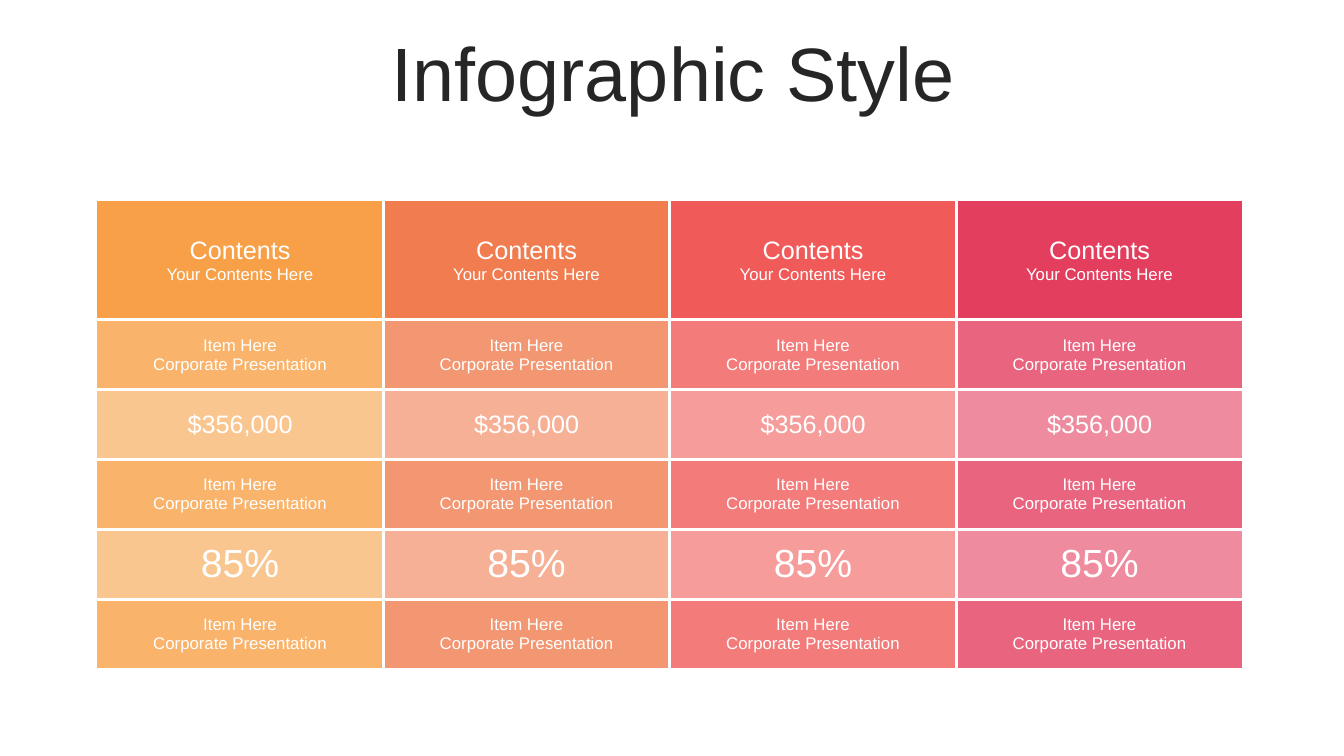
"""Build a slide with a title and a four-column infographic table."""
from lxml.etree import SubElement
from pptx import Presentation
from pptx.dml.color import RGBColor as RGB
from pptx.enum.text import MSO_ANCHOR as ANCHOR, PP_ALIGN as ALIGN
from pptx.oxml.ns import qn
from pptx.util import Cm, Pt

COLORS = {"white": "FFFFFF", "title": "262626", "orange": "F8A047",
          "coral": "F07C4F", "red": "F05A59", "crimson": "E43E5F"}
COLUMNS = ["orange", "coral", "red", "crimson"]
ITEM = {"lines": [("Item Here", 12), ("Corporate Presentation", 12)],
        "alpha": 80, "height": 1.76}
ROWS = [
    {"lines": [("Contents", 18), ("Your Contents Here", 12)],
     "alpha": 100, "height": 3},
    ITEM,
    {"lines": [("$356,000", 18)], "alpha": 60, "height": 1.76},
    ITEM,
    {"lines": [("85%", 28)], "alpha": 60, "height": 1.76},
    ITEM,
]
CELL_FORMAT = {"margin_left": Cm(0.3), "margin_right": Cm(0.3),
               "margin_top": Cm(0.13), "margin_bottom": Cm(0.13),
               "vertical_anchor": ANCHOR.MIDDLE}


def set_attrs(obj, values):
    for name, value in values.items():
        setattr(obj, name, value)


def write_lines(tf, lines, color):
    for i, (text, size) in enumerate(lines):
        p = tf.add_paragraph() if i else tf.paragraphs[0]
        p.alignment = ALIGN.CENTER
        r = p.add_run()
        r.text = text
        set_attrs(r.font, {"name": "Arial", "size": Pt(size), "bold": False})
        r.font.color.rgb = RGB.from_string(COLORS[color])


def set_borders(cell, widths):
    tcPr = cell._tc.get_or_add_tcPr()
    for side, width in widths.items():
        ln = SubElement(tcPr, qn(f"a:ln{side}"), w=str(Pt(width)))
        fill = SubElement(ln, qn("a:solidFill"))
        SubElement(fill, qn("a:srgbClr"), val=COLORS["white"])


def fill_cell(cell, color, alpha):
    cell.fill.solid()
    cell.fill.fore_color.rgb = RGB.from_string(COLORS[color])
    if alpha < 100:
        clr = cell._tc.tcPr.find(qn("a:solidFill")).find(qn("a:srgbClr"))
        SubElement(clr, qn("a:alpha"), val=str(alpha * 1000))


def add_title(s, left, top, width, height):
    sp = s.shapes.add_textbox(Cm(left), Cm(top), Cm(width), Cm(height))
    tf = sp.text_frame
    set_attrs(tf, {"word_wrap": True, "vertical_anchor": ANCHOR.MIDDLE})
    write_lines(tf, [("Infographic Style", 54)], "title")
    tf.paragraphs[0].line_spacing = 0.9


def add_contents_table(s, left, top, width):
    height = sum(row["height"] for row in ROWS)
    table = s.shapes.add_table(len(ROWS), len(COLUMNS), Cm(left), Cm(top),
                               Cm(width), Cm(height)).table
    set_attrs(table, {"first_row": False, "horz_banding": False})
    last_row, last_col = len(ROWS) - 1, len(COLUMNS) - 1
    for i, row in enumerate(ROWS):
        table.rows[i].height = Cm(row["height"])
        for j, color in enumerate(COLUMNS):
            cell = table.cell(i, j)
            set_attrs(cell, CELL_FORMAT)
            write_lines(cell.text_frame, row["lines"], "white")
            edges = {"L": j == 0, "R": j == last_col,
                     "T": i == 0, "B": i == last_row}
            set_borders(cell, {k: 1 if outer else 2.25
                               for k, outer in edges.items()})
            fill_cell(cell, color, row["alpha"])


def main():
    prs = Presentation()
    set_attrs(prs, {"slide_width": Cm(33.87), "slide_height": Cm(19.05)})
    s = prs.slides.add_slide(prs.slide_layouts[6])
    add_title(s, 0.89, 0.94, 32.16, 2)
    add_contents_table(s, 2.44, 5.06, 28.88)
    prs.save("out.pptx")


if __name__ == "__main__":
    main()
